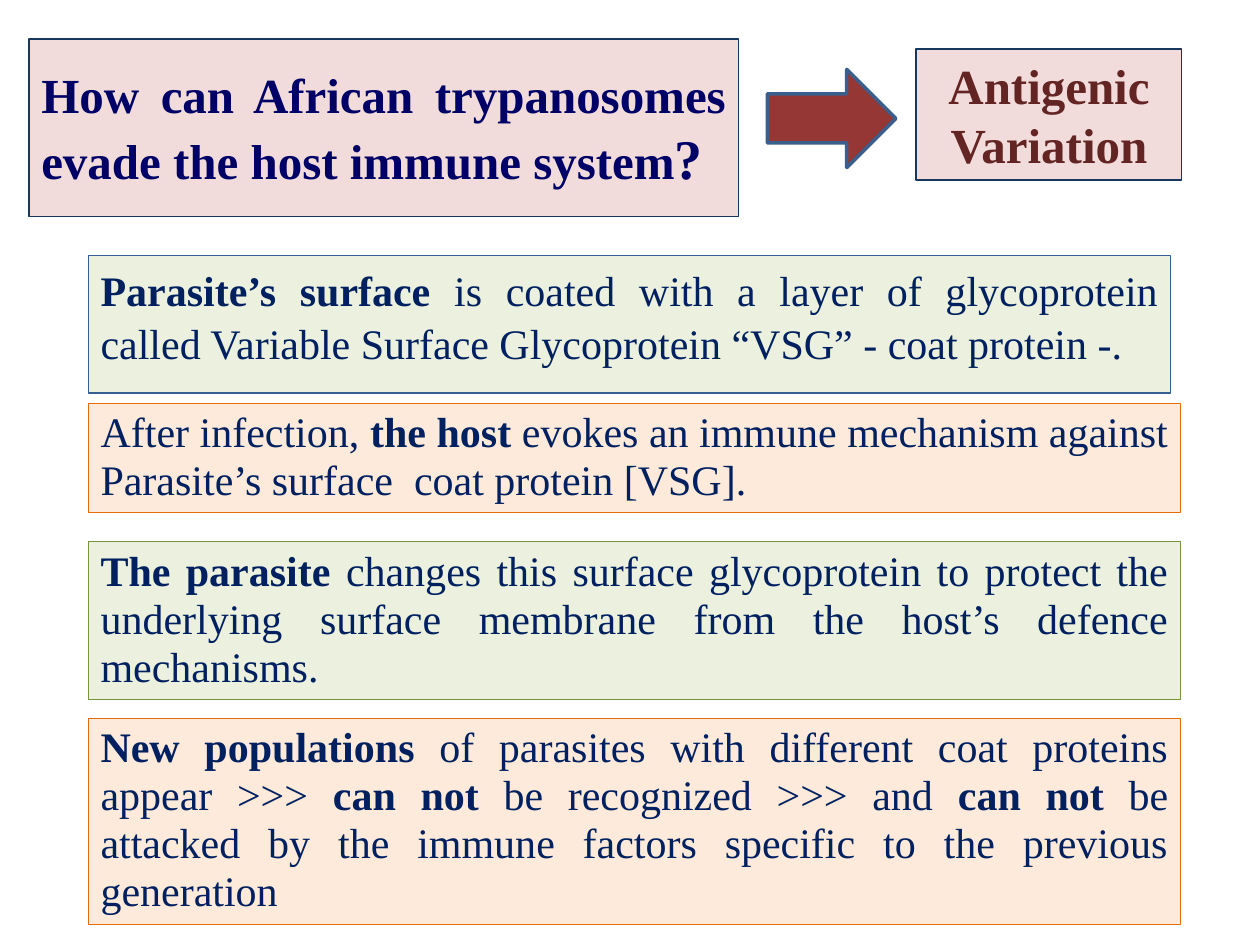
from pptx import Presentation
from pptx.dml.color import RGBColor
from pptx.enum.shapes import MSO_SHAPE
from pptx.enum.text import MSO_ANCHOR, PP_ALIGN
from pptx.util import Inches, Pt

RECTANGLE, RIGHT_ARROW = MSO_SHAPE.RECTANGLE, MSO_SHAPE.RIGHT_ARROW
TOP, MIDDLE = MSO_ANCHOR.TOP, MSO_ANCHOR.MIDDLE
CENTER, JUSTIFY = PP_ALIGN.CENTER, PP_ALIGN.JUSTIFY

FONT = "Times New Roman"
PINK, GREEN, ORANGE = "F2DCDB", "EBF1DE", "FDEADA"
NAVY, TITLE_BLUE, DARK_RED = "002060", "000066", "632523"


def color(value):
    return RGBColor.from_string(value)


def add_box(runs, left, top, width, height, *, fill, line, line_width=0.75,
            preset=RECTANGLE, text_color=NAVY, align=JUSTIFY, anchor=TOP,
            line_spacing=1.0, space_after=0):
    """Add a filled shape; each run is (text, size in points, bold)."""
    shape = slide.shapes.add_shape(
        preset, Inches(left), Inches(top), Inches(width), Inches(height))
    shape.shadow.inherit = False
    shape.fill.solid()
    shape.fill.fore_color.rgb = color(fill)
    shape.line.color.rgb = color(line)
    shape.line.width = Pt(line_width)
    frame = shape.text_frame
    frame.word_wrap = True
    frame.vertical_anchor = anchor
    paragraph = frame.paragraphs[0]
    paragraph.alignment = align
    paragraph.line_spacing = line_spacing
    paragraph.space_after = Pt(space_after)
    for text, size, bold in runs:
        run = paragraph.add_run()
        run.text = text
        run.font.name = FONT
        run.font.size = Pt(size)
        run.font.bold = bold
        run.font.color.rgb = color(text_color)


presentation = Presentation()
presentation.slide_width = Inches(10)
presentation.slide_height = Inches(7.5)
slide = presentation.slides.add_slide(presentation.slide_layouts[6])

# Question, arrow and answer
add_box([("How can African trypanosomes evade the host immune system", 28, True),
         ("?", 32, True)],
        0.23, 0.31, 5.63, 1.41, fill=PINK, line="17375E",
        text_color=TITLE_BLUE, anchor=MIDDLE)
add_box([("Antigenic Variation", 28, True)],
        7.27, 0.39, 2.11, 1.04, fill=PINK, line="17375E",
        text_color=DARK_RED, align=CENTER)
add_box([], 6.09, 0.55, 1.02, 0.78, fill="953735", line="3A5F8C",
        line_width=2, preset=RIGHT_ARROW)

# Steps of the mechanism: top, width, height, fill, line, line spacing,
# space after, and text pieces with their bold flag
steps = [
    (2.03, 8.59, 1.09, GREEN, "376092", 1.05, 0, [
        ("Parasite’s surface ", True),
        ("is coated with a layer of glycoprotein called Variable Surface "
         "Glycoprotein “VSG” - coat protein -.", False)]),
    (3.2, 8.67, 0.87, ORANGE, "E46C0A", 0.95, 12, [
        ("After infection, ", False),
        ("the host ", True),
        ("evokes an immune mechanism against Parasite’s surface  "
         "coat protein [VSG].", False)]),
    (4.3, 8.67, 1.25, GREEN, "77933C", 0.95, 12, [
        ("The parasite ", True),
        ("changes this surface glycoprotein to protect the underlying surface "
         "membrane from the host’s defence mechanisms.", False)]),
    (5.7, 8.67, 1.64, ORANGE, "E46C0A", 0.95, 12, [
        ("New populations ", True),
        ("of parasites with different coat proteins appear >>> ", False),
        ("can not ", True),
        ("be recognized >>> and ", False),
        ("can not ", True),
        ("be attacked by the immune factors specific to the previous "
         "generation", False)]),
]
for top, width, height, fill, line, line_spacing, space_after, pieces in steps:
    add_box([(text, 24, bold) for text, bold in pieces],
            0.7, top, width, height, fill=fill, line=line,
            line_spacing=line_spacing, space_after=space_after)

presentation.save("out.pptx")
